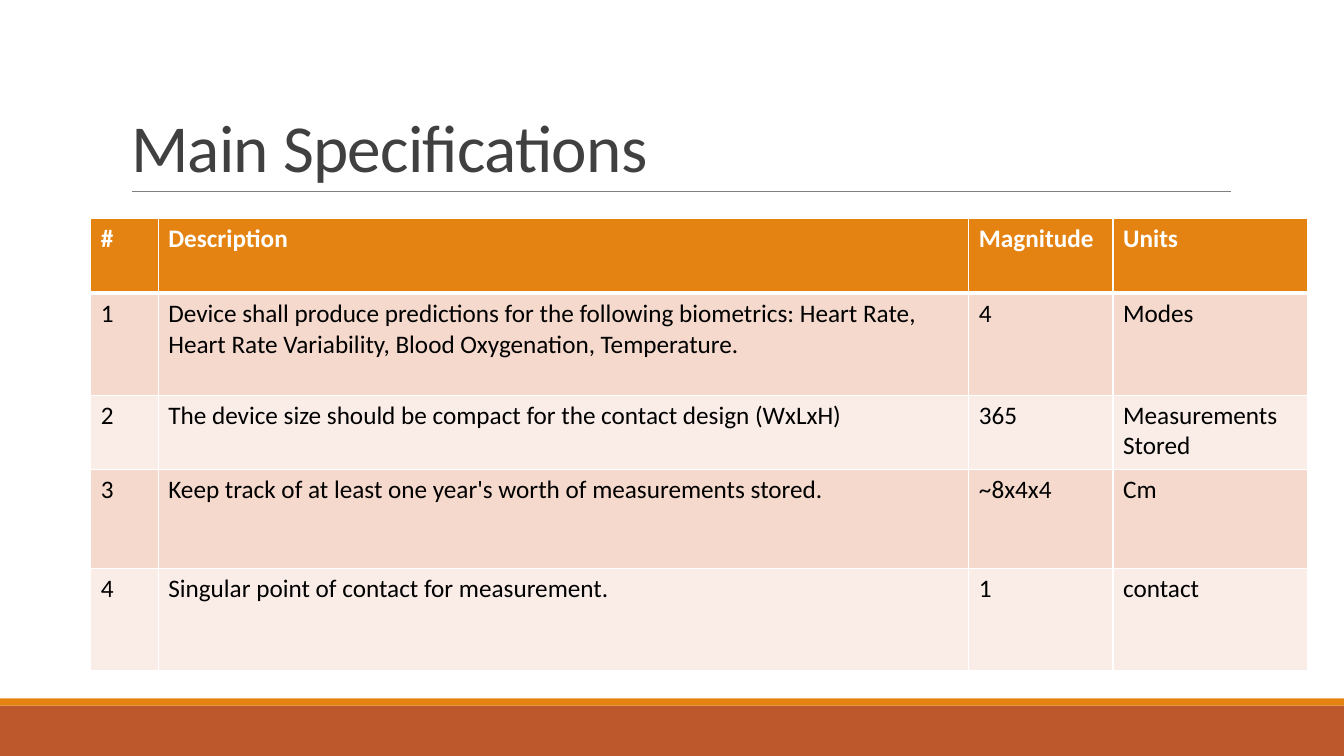
from lxml import etree
from pptx import Presentation
from pptx.dml.color import RGBColor
from pptx.enum.shapes import MSO_CONNECTOR, MSO_SHAPE
from pptx.enum.text import MSO_ANCHOR, PP_ALIGN
from pptx.oxml.ns import qn
from pptx.util import Inches, Pt

RECTANGLE = MSO_SHAPE.RECTANGLE
STRAIGHT = MSO_CONNECTOR.STRAIGHT
BOTTOM = MSO_ANCHOR.BOTTOM
LEFT = PP_ALIGN.LEFT

FONT = "Calibri"
WHITE = "FFFFFF"
ORANGE = "E48312"
RUST = "BD582C"
ROW_BANDS = ["F5D9CC", "FAEDE7"]

COLUMN_WIDTHS = [0.67, 8.04, 1.43, 1.93]
ROW_HEIGHTS = [0.74, 1.01, 0.74, 0.98, 1.01]
SPECIFICATIONS = [
    ["#", "Description", "Magnitude", "Units"],
    ["1", "Device shall produce predictions for the following biometrics: Heart Rate, "
     "Heart Rate Variability, Blood Oxygenation, Temperature.", "4", "Modes"],
    ["2", "The device size should be compact for the contact design (WxLxH)",
     "365", "Measurements Stored"],
    ["3", "Keep track of at least one year's worth of measurements stored.", "~8x4x4", "Cm"],
    ["4", "Singular point of contact for measurement.", "1", "contact"],
]


def rgb(value):
    """Turn a hex string into a colour."""
    return RGBColor.from_string(value)


def style_font(font, size, color, bold=False):
    """Set the face, size, colour and weight of a font."""
    font.name = FONT
    font.size = Pt(size)
    font.bold = bold
    font.color.rgb = rgb(color)


def add_band(slide, top, height, color):
    """Add a plain band across the full slide width."""
    band = slide.shapes.add_shape(
        RECTANGLE, 0, Inches(top), Inches(13.33), Inches(height))
    band.shadow.inherit = False
    band.fill.solid()
    band.fill.fore_color.rgb = rgb(color)
    band.line.fill.background()


def add_title_rule(slide):
    """Add the thin grey line below the title."""
    rule = slide.shapes.add_connector(
        STRAIGHT, Inches(1.31), Inches(1.9), Inches(12.21), Inches(1.9))
    rule.line.color.rgb = rgb("808080")
    rule.line.width = Pt(0.5)
    etree.SubElement(rule._element.spPr, qn("a:effectLst"))


def fill_title(slide, text):
    """Place and format the title placeholder."""
    title = slide.shapes.title
    title.left, title.top = Inches(1.2), Inches(0.31)
    title.width, title.height = Inches(11), Inches(1.59)
    frame = title.text_frame
    frame.text = text
    frame.word_wrap = True
    frame.vertical_anchor = BOTTOM
    heading = frame.paragraphs[0]
    heading.alignment = LEFT
    heading.line_spacing = 0.85
    run = heading.runs[0]
    style_font(run.font, 48, "404040")
    run.font._element.set("spc", "-50")


def set_borders(cell, bottom_width, top_width):
    """Draw white borders on the four sides of a cell."""
    properties = cell._tc.get_or_add_tcPr()
    widths = {"L": 1, "R": 1, "T": top_width, "B": bottom_width}
    for position, (side, width) in enumerate(widths.items()):
        border = etree.Element(qn(f"a:ln{side}"), w=str(Pt(width)))
        fill = etree.SubElement(border, qn("a:solidFill"))
        etree.SubElement(fill, qn("a:srgbClr"), val=WHITE)
        properties.insert(position, border)


def fill_cell(cell, text, row):
    """Write a cell and style it as header or banded body."""
    is_header = row == 0
    cell.text_frame.text = text
    style_font(cell.text_frame.paragraphs[0].runs[0].font, 18,
               WHITE if is_header else "000000", is_header)
    cell.fill.solid()
    cell.fill.fore_color.rgb = rgb(ORANGE if is_header else ROW_BANDS[(row - 1) % 2])
    set_borders(cell, 3 if is_header else 1, 3 if row == 1 else 1)


def add_specifications(slide):
    """Add the table of specifications."""
    table = slide.shapes.add_table(
        len(ROW_HEIGHTS), len(COLUMN_WIDTHS), Inches(0.9), Inches(2.17),
        Inches(sum(COLUMN_WIDTHS)), Inches(sum(ROW_HEIGHTS))).table
    for column, width in zip(table.columns, COLUMN_WIDTHS):
        column.width = Inches(width)
    for row, height in zip(table.rows, ROW_HEIGHTS):
        row.height = Inches(height)
    for row, texts in enumerate(SPECIFICATIONS):
        for column, text in enumerate(texts):
            fill_cell(table.cell(row, column), text, row)


def main():
    """Build the slide and save it."""
    deck = Presentation()
    deck.slide_width, deck.slide_height = Inches(13.33), Inches(7.5)
    slide = deck.slides.add_slide(deck.slide_layouts[5])
    add_band(slide, 7, 0.5, RUST)
    add_band(slide, 6.93, 0.07, ORANGE)
    add_title_rule(slide)
    fill_title(slide, "Main Specifications")
    add_specifications(slide)
    deck.save("out.pptx")


if __name__ == "__main__":
    main()
